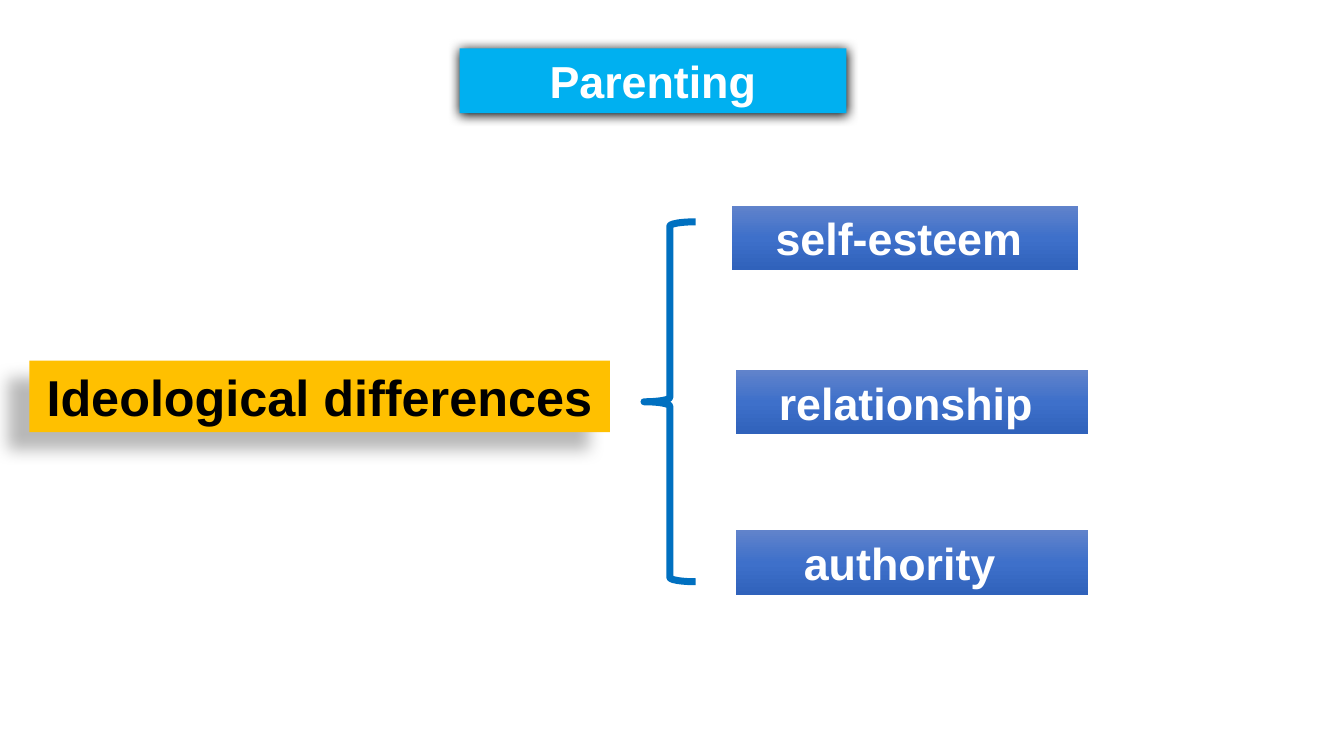
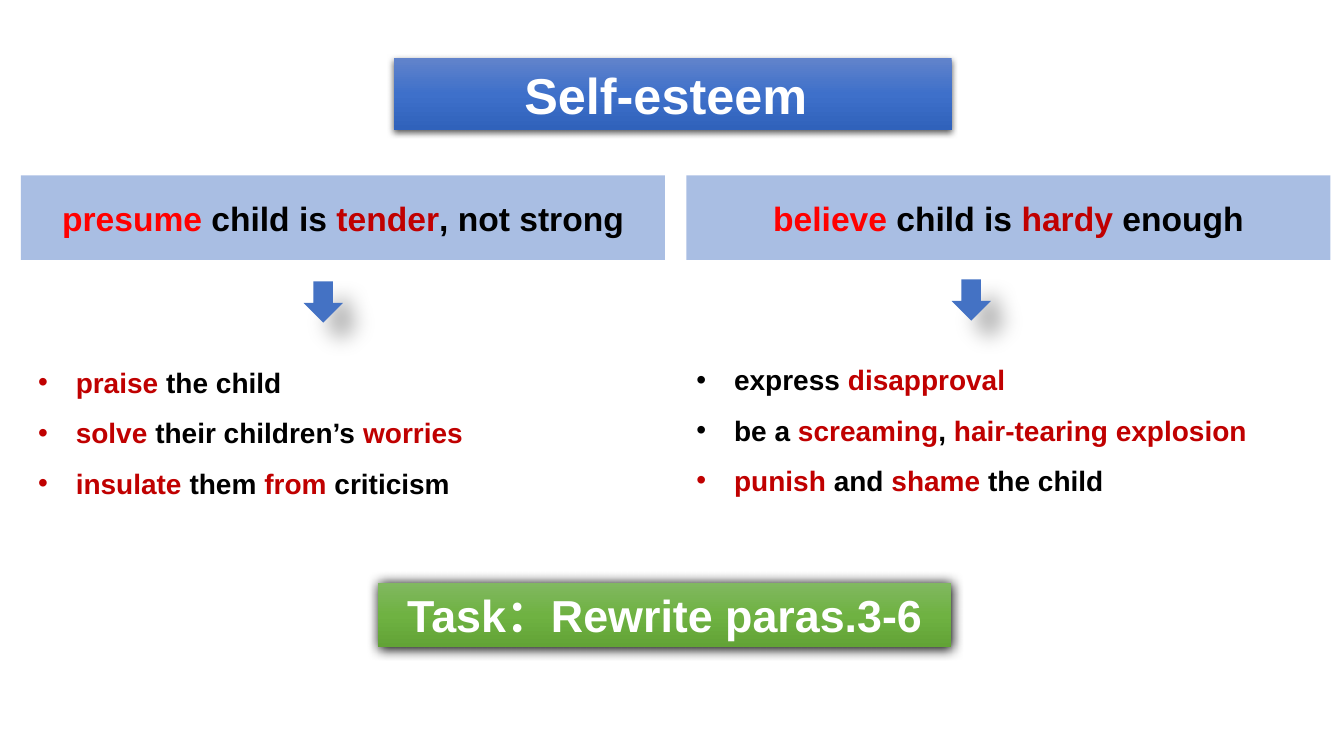
from typing import NamedTuple

from lxml.etree import SubElement
from pptx import Presentation
from pptx.dml.color import RGBColor
from pptx.enum.shapes import MSO_SHAPE
from pptx.enum.text import MSO_ANCHOR, PP_ALIGN
from pptx.oxml.ns import qn
from pptx.util import Cm, Pt

WHITE = RGBColor(0xFF, 0xFF, 0xFF)
BLACK = RGBColor(0x00, 0x00, 0x00)
RED = RGBColor(0xFF, 0x00, 0x00)
DARK_RED = RGBColor(0xC0, 0x00, 0x00)
AMBER = RGBColor(0xFF, 0xC0, 0x00)
SKY = RGBColor(0x00, 0xB0, 0xF0)
BRACE_BLUE = RGBColor(0x00, 0x70, 0xC0)
BLUE = RGBColor(0x44, 0x72, 0xC4)
BLUE_GRADIENT = (RGBColor(0x61, 0x83, 0xCB), RGBColor(0x3E, 0x70, 0xCA),
                 RGBColor(0x30, 0x62, 0xBB))
GREEN_GRADIENT = (RGBColor(0x81, 0xB8, 0x61), RGBColor(0x6F, 0xB2, 0x42),
                  RGBColor(0x62, 0xA3, 0x36))
FONT = "Arial"
INSET = 0.25
LINE_HEIGHT = 1.63
TALL_LINE_HEIGHT = 1.8


class Box(NamedTuple):
    """A region of the slide in centimetres."""
    left: float
    top: float
    width: float
    height: float


class Shadow(NamedTuple):
    """An outer shadow: opacity in percent, lengths in points, angle in degrees."""
    opacity: float
    blur: float
    distance: float
    angle: float


GLOW = Shadow(100, 8.5, 1, 90)
EDGE = Shadow(63, 4.5, 1.5, 90)
DROP_LEFT = Shadow(28, 11.8, 19.7, 141)
DROP_RIGHT = Shadow(30, 15, 18, 45)


def place(shape, box):
    """Move a shape to a box."""
    shape.left, shape.top, shape.width, shape.height = map(Cm, box)


def paint(shape, fill):
    """Fill a shape with one colour or a vertical three-colour gradient."""
    if isinstance(fill, RGBColor):
        shape.fill.solid()
        shape.fill.fore_color.rgb = fill
        return
    shape.fill.gradient()
    shape.fill.gradient_angle = 270
    stops = shape.element.spPr.find(qn("a:gradFill")).find(qn("a:gsLst"))
    for stop in list(stops):
        stops.remove(stop)
    for position, color in zip((0, 50000, 100000), fill):
        stop = SubElement(stops, qn("a:gs"), pos=str(position))
        SubElement(stop, qn("a:srgbClr"), val=str(color))


def cast(shape, shadow):
    """Give a shape the shadow described, or none."""
    shape.shadow.inherit = False
    if shadow:
        effects = shape.element.spPr.find(qn("a:effectLst"))
        outer = SubElement(effects, qn("a:outerShdw"),
                           blurRad=str(Pt(shadow.blur)), dist=str(Pt(shadow.distance)),
                           dir=str(shadow.angle * 60000), algn="ctr", rotWithShape="0")
        color = SubElement(outer, qn("a:srgbClr"), val=str(BLACK))
        SubElement(color, qn("a:alpha"), val=str(shadow.opacity * 1000))


def write(para, spans, size):
    """Add bold runs of (text, colour) to a paragraph."""
    for text, color in spans:
        span = para.add_run()
        span.text = text
        span.font.name = FONT
        span.font.size = Pt(size)
        span.font.bold = True
        span.font.color.rgb = color


def add_figure(page, kind, box, fill, shadow=None):
    """Add a filled preset shape without outline."""
    shape = page.shapes.add_shape(kind, *map(Cm, box))
    paint(shape, fill)
    shape.line.fill.background()
    cast(shape, shadow)
    return shape


def label(shape, spans, size, shift=0):
    """Centre one line in a shape, with extra room kept free on the right."""
    frame = shape.text_frame
    frame.word_wrap = False
    frame.vertical_anchor = MSO_ANCHOR.MIDDLE
    frame.margin_left = Cm(INSET)
    frame.margin_right = Cm(INSET + shift)
    frame.margin_top = frame.margin_bottom = Cm(INSET / 2)
    frame.paragraphs[0].alignment = PP_ALIGN.CENTER
    write(frame.paragraphs[0], spans, size)


def add_titled_page(deck, box, text, size, fill, shadow, shift=0):
    """Add a slide whose title is a coloured plate."""
    page = deck.slides.add_slide(deck.slide_layouts[5])
    title = page.shapes.title
    place(title, box)
    paint(title, fill)
    cast(title, shadow)
    label(title, [(text, WHITE)], size, shift)
    return page


def add_branches(page, box, branches):
    """Add a brace and the plates it opens to, inside a box."""
    brace = page.shapes.add_shape(
        MSO_SHAPE.LEFT_BRACE, Cm(box.left), Cm(box.top + 0.41), Cm(1.3), Cm(9.07))
    brace.fill.background()
    brace.line.color.rgb = BRACE_BLUE
    brace.line.width = Pt(5)
    cast(brace, None)
    for text, left, top, width, shift in branches:
        plate_box = Box(box.left + left, box.top + top, width, LINE_HEIGHT)
        plate = add_figure(page, MSO_SHAPE.RECTANGLE, plate_box, BLUE_GRADIENT)
        label(plate, [(text, WHITE)], 32, shift)


def add_bullets(page, box, lines):
    """Add a bulleted list of coloured lines."""
    frame = page.shapes.add_textbox(*map(Cm, box)).text_frame
    frame.word_wrap = True
    for index, spans in enumerate(lines):
        para = frame.add_paragraph() if index else frame.paragraphs[0]
        para.line_spacing = 1.5
        properties = para._p.get_or_add_pPr()
        properties.set("marL", str(Cm(0.95)))
        properties.set("indent", str(-Cm(0.95)))
        SubElement(properties, qn("a:buFont"), typeface=FONT)
        SubElement(properties, qn("a:buChar"), char="•")
        write(para, spans, 20)


def add_attitude(page, box, heading, arrow_offset, list_offset, lines):
    """Add a column: heading band, arrow and list, inside a box."""
    band_box = box._replace(height=2.13)
    band = add_figure(page, MSO_SHAPE.RECTANGLE, band_box, BLUE)
    color = band.element.spPr.find(qn("a:solidFill"))[0]
    SubElement(color, qn("a:alpha"), val="46000")
    label(band, heading, 24)
    across, down = arrow_offset
    add_figure(page, MSO_SHAPE.DOWN_ARROW,
               Box(box.left + across, box.top + down, 0.99, 1.04), BLUE, DROP_RIGHT)
    across, down = list_offset
    add_bullets(page, Box(box.left + across, box.top + down, box.width, 4.11), lines)


def add_parenting_page(deck):
    """Build the overview of differences."""
    page = add_titled_page(deck, Box(11.58, 1.22, 9.75, LINE_HEIGHT),
                           "Parenting", 32, SKY, GLOW)
    topic = add_figure(page, MSO_SHAPE.RECTANGLE,
                       Box(0.74, 9.09, 14.63, TALL_LINE_HEIGHT), AMBER, DROP_LEFT)
    label(topic, [("Ideological differences", BLACK)], 36)
    add_branches(page, Box(16.23, 5.18, 11.2, 9.81), [
        ("self-esteem", 2.21, 0, 8.74, 0.31),
        ("relationship", 2.31, 4.14, 8.89, 0.31),
        ("authority", 2.31, 8.18, 8.89, 0.62),
    ])


def add_self_esteem_page(deck):
    """Build the comparison of two attitudes."""
    page = add_titled_page(deck, Box(9.93, 1.47, 14.05, TALL_LINE_HEIGHT),
                           "Self-esteem", 36, BLUE_GRADIENT, EDGE, 0.35)
    column = Box(0.53, 4.42, 16.23, 8.35)
    add_attitude(
        page, column,
        [("presume", RED), (" child is ", BLACK), ("tender", DARK_RED),
         (", not strong", BLACK)],
        (7.12, 2.67), (0.18, 4.24),
        [[("praise", DARK_RED), (" the child", BLACK)],
         [("solve", DARK_RED), (" their children’s ", BLACK), ("worries", DARK_RED)],
         [("insulate", DARK_RED), (" them ", BLACK), ("from ", DARK_RED),
          ("criticism", BLACK)]])
    add_attitude(
        page, column._replace(left=17.3),
        [("believe", RED), (" child is ", BLACK), ("hardy", DARK_RED),
         (" enough", BLACK)],
        (6.68, 2.62), (0, 4.17),
        [[("express", BLACK), (" disapproval", DARK_RED)],
         [("be a ", BLACK), ("screaming", DARK_RED), (", ", BLACK),
          ("hair-tearing explosion", DARK_RED)],
         [("punish", DARK_RED), (" and ", BLACK), ("shame", DARK_RED),
          (" the child", BLACK)]])
    task = add_figure(page, MSO_SHAPE.RECTANGLE,
                      Box(9.53, 14.68, 14.45, LINE_HEIGHT), GREEN_GRADIENT, GLOW)
    label(task, [("Task：Rewrite paras.3-6", WHITE)], 32)


def main():
    """Build and save the deck."""
    deck = Presentation()
    deck.slide_width, deck.slide_height = Cm(33.87), Cm(19.05)
    add_parenting_page(deck)
    add_self_esteem_page(deck)
    deck.save("out.pptx")


if __name__ == "__main__":
    main()
